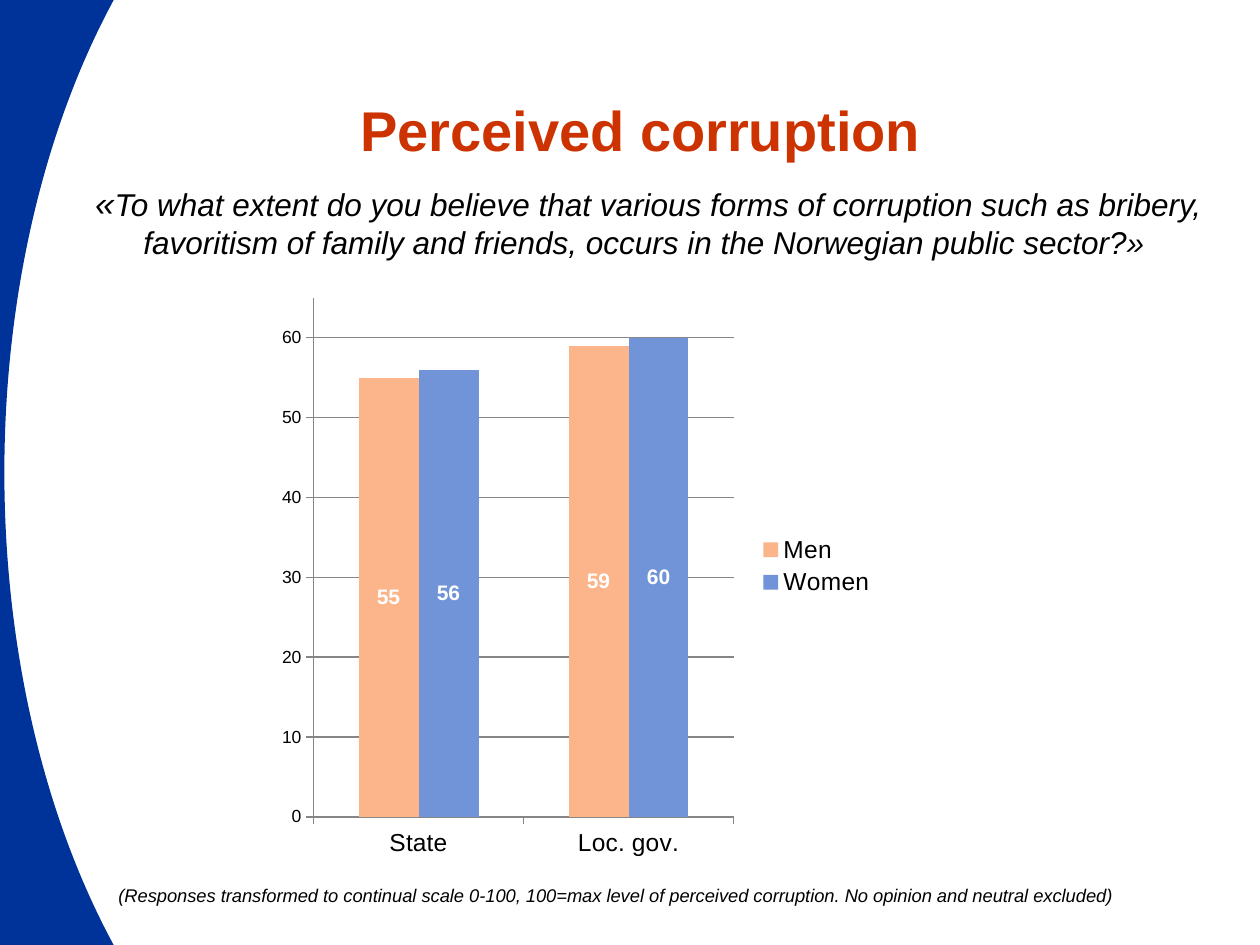
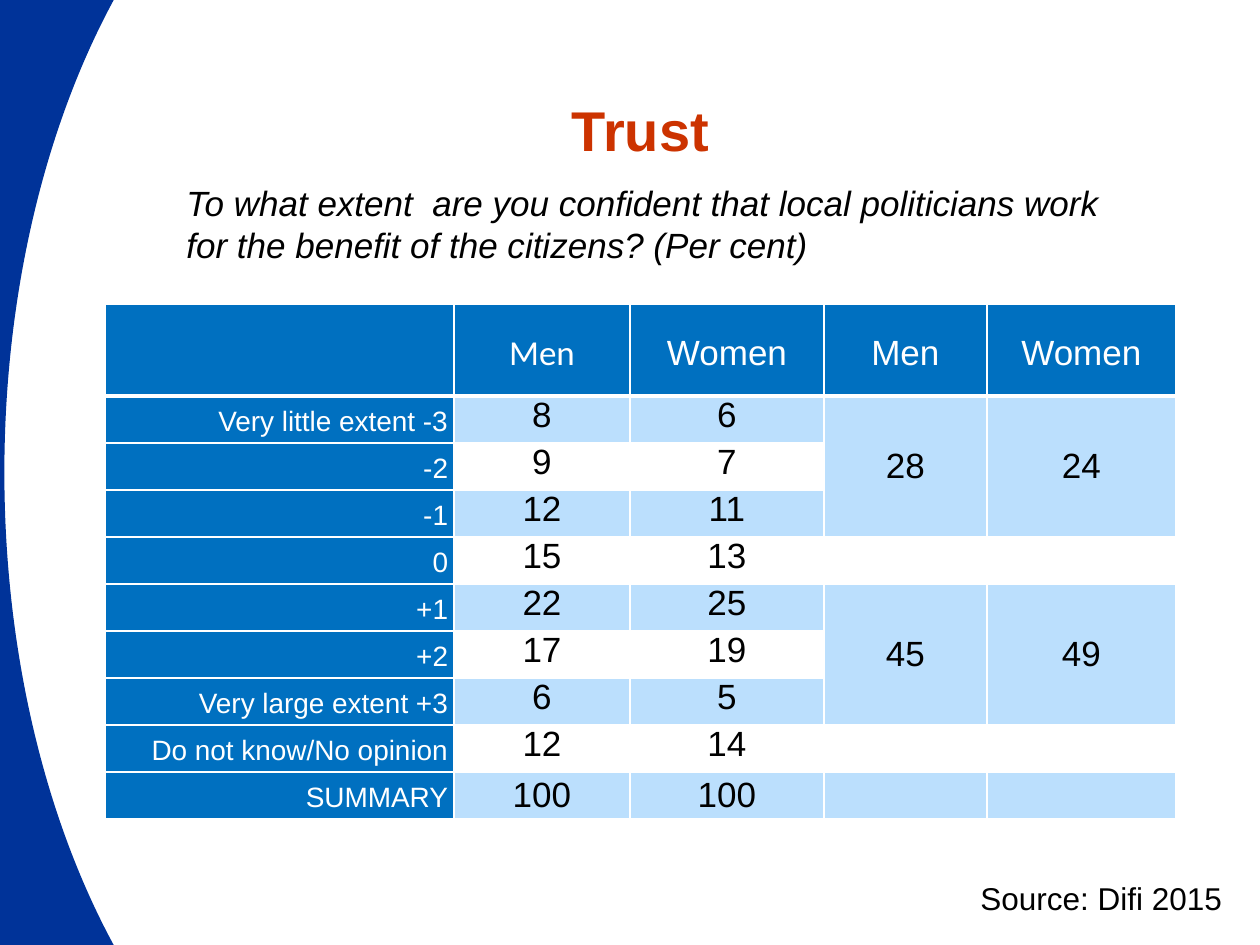
from dataclasses import dataclass

from lxml.etree import SubElement
from pptx import Presentation
from pptx.chart.data import CategoryChartData
from pptx.dml.color import RGBColor
from pptx.enum.chart import XL_CHART_TYPE as ChartType
from pptx.enum.chart import XL_LABEL_POSITION as LabelPosition
from pptx.enum.chart import XL_LEGEND_POSITION as LegendPosition
from pptx.enum.chart import XL_TICK_MARK as TickMark
from pptx.enum.shapes import MSO_SHAPE as Preset
from pptx.enum.text import MSO_ANCHOR as Anchor
from pptx.enum.text import MSO_AUTO_SIZE as AutoSize
from pptx.enum.text import PP_ALIGN as Align
from pptx.oxml import parse_xml
from pptx.oxml.ns import nsdecls, qn
from pptx.util import Emu, Pt


@dataclass(frozen=True)
class Theme:
    """Colours, fonts and type sizes of the deck."""
    band: str = "003399"
    title: str = "CC3300"
    ink: str = "000000"
    paper: str = "FFFFFF"
    head: str = "0070C0"
    stripe: str = "BBDFFD"
    men: str = "FCB58A"
    women: str = "7194D9"
    rule: str = "868686"
    face: str = "Arial"
    alt_face: str = "Calibri"
    title_size: float = 32
    large: float = 20
    body: float = 18
    row_label: float = 16
    legend: float = 14
    bar_label: float = 12
    note: float = 10.5
    axis: float = 10


THEME = Theme()
EMU_PER_PX = 914400 / 126


def px(length):
    """Turn px into EMU."""
    return Emu(round(length * EMU_PER_PX))


def rgb(colour):
    """Turn a hex string into a colour."""
    return RGBColor.from_string(colour)


def style_font(font, size, colour=THEME.ink, face=THEME.face, bold=False, italic=False):
    """Set every used property of a font."""
    font.name, font.size = face, Pt(size)
    font.bold, font.italic = bold, italic
    font.color.rgb = rgb(colour)


def add_text(page, box, spans, size, align=Align.LEFT, wrap=True, **look):
    """Place one paragraph made of spans and return its frame."""
    frame = page.shapes.add_textbox(*map(px, box)).text_frame
    frame.word_wrap = wrap
    frame.auto_size = AutoSize.SHAPE_TO_FIT_TEXT
    para = frame.paragraphs[0]
    para.alignment = align
    style_font(para.font, size, **look)
    for text in spans:
        para.add_run().text = text
    return frame


def add_page(deck, title):
    """Add a slide with the curved band and the title."""
    page = deck.slides.add_slide(deck.slide_layouts[6])
    moon = page.shapes.add_shape(Preset.MOON, *map(px, (-168, -84, 336, 1113)))
    moon.adjustments[0] = 0.513
    moon.shadow.inherit = False
    moon.fill.solid()
    moon.fill.fore_color.rgb = rgb(THEME.band)
    moon.line.fill.background()
    frame = add_text(page, (105, 73, 1071, 105), [title], THEME.title_size,
                     Align.CENTER, colour=THEME.title, bold=True)
    frame.auto_size = AutoSize.NONE
    frame.vertical_anchor = Anchor.MIDDLE
    frame.paragraphs[0].line_spacing = Pt(42)
    return page


def set_plot_area(chart, left, top, width, height):
    """Fix the inner plot area as fractions of the chart."""
    values = (("layoutTarget", "inner"), ("xMode", "edge"), ("yMode", "edge"),
              ("x", left), ("y", top), ("w", width), ("h", height))
    plot_area = chart._chartSpace.chart.plotArea
    for old in plot_area.findall(qn("c:layout")):
        plot_area.remove(old)
    layout = parse_xml(f"<c:layout {nsdecls('c')}/>")
    manual = SubElement(layout, qn("c:manualLayout"))
    for tag, value in values:
        SubElement(manual, qn(f"c:{tag}")).set("val", str(value))
    plot_area.insert(0, layout)


def add_corruption_chart(page, box):
    """Place the clustered columns for men and women."""
    data = CategoryChartData(number_format="#,##0")
    data.categories = ["State", "Loc. gov."]
    data.add_series("Men", (55, 59))
    data.add_series("Women", (56, 60))
    chart = page.shapes.add_chart(ChartType.COLUMN_CLUSTERED, *map(px, box), data).chart
    chart.has_title = False
    style_font(chart.font, THEME.axis)
    set_plot_area(chart, 0.066, 0.047, 0.683, 0.877)

    chart.has_legend = True
    chart.legend.position = LegendPosition.RIGHT
    chart.legend.include_in_layout = False
    style_font(chart.legend.font, THEME.legend)

    scale = chart.value_axis
    scale.minimum_scale, scale.maximum_scale, scale.major_unit = 0, 65, 10
    scale.tick_labels.number_format = "#,##0"
    scale.tick_labels.number_format_is_linked = False
    scale.major_gridlines.format.line.color.rgb = rgb(THEME.rule)
    for axis, size in ((scale, THEME.axis), (chart.category_axis, THEME.legend)):
        axis.major_tick_mark = TickMark.OUTSIDE
        axis.format.line.color.rgb = rgb(THEME.rule)
        style_font(axis.tick_labels.font, size)

    plot = chart.plots[0]
    plot.gap_width, plot.overlap, plot.vary_by_categories = 150, 0, False
    for series, colour in zip(plot.series, (THEME.men, THEME.women)):
        series.format.fill.solid()
        series.format.fill.fore_color.rgb = rgb(colour)
        labels = series.data_labels
        labels.show_value = True
        labels.position = LabelPosition.CENTER
        labels.number_format = "#,##0"
        labels.number_format_is_linked = False
        style_font(labels.font, THEME.bar_label, THEME.paper, bold=True)


def style_cell(cell, fill, bottom=1):
    """Give a cell white borders and a fill, or none."""
    properties = cell._tc.get_or_add_tcPr()
    for side, width in (("L", 1), ("R", 1), ("T", 1), ("B", bottom)):
        line = SubElement(properties, qn(f"a:ln{side}"), w=str(Pt(width)))
        solid = SubElement(line, qn("a:solidFill"))
        SubElement(solid, qn("a:srgbClr"), val=THEME.paper)
    if fill:
        cell.fill.solid()
        cell.fill.fore_color.rgb = rgb(fill)
    else:
        cell.fill.background()


def write_cell(cell, text, size, align, inset=1, anchor=Anchor.MIDDLE, spacing=None, **look):
    """Write one styled paragraph into a cell."""
    cell.margin_left = cell.margin_right = px(inset)
    cell.margin_top = cell.margin_bottom = 0
    cell.vertical_anchor = anchor
    para = cell.text_frame.paragraphs[0]
    para.alignment = align
    para.line_spacing = spacing
    style_font(para.font, size, **look)
    if text:
        para.add_run().text = text


def add_trust_table(page, box):
    """Place the answers with their grouped totals."""
    heads = ("", "Men", "Women", "Men", "Women")
    answers = (("Very little extent -3", "8", "6", "28", "24"),
               ("-2", "9", "7"),
               ("-1", "12", "11"),
               ("0", "15", "13"),
               ("+1", "22", "25", "45", "49"),
               ("+2", "17", "19"),
               ("Very large extent +3", "6", "5"),
               ("Do not know/No opinion", "12", "14"),
               ("SUMMARY", "100", "100"))
    last = len(answers)
    table = page.shapes.add_table(last + 1, len(heads), *map(px, box)).table
    table.first_row = table.horz_banding = False
    for column, width in zip(table.columns, (349, 176, 194, 163, 189)):
        column.width = px(width)
    for index, row in enumerate(table.rows):
        row.height = px(47 if index else 92)

    label = dict(inset=6, spacing=1.15, colour=THEME.paper)
    for col, text in enumerate(heads):
        cell = table.cell(0, col)
        style_cell(cell, THEME.head, bottom=3)
        write_cell(cell, text, THEME.large, Align.CENTER,
                   face=THEME.alt_face if col == 1 else THEME.face, **label)
    for index, answer in enumerate(answers, 1):
        stripe = THEME.stripe if index % 2 else None
        for col in range(len(heads)):
            cell = table.cell(index, col)
            text = answer[col] if col < len(answer) else ""
            if col == 0:
                style_cell(cell, THEME.head)
                write_cell(cell, text, THEME.row_label, Align.RIGHT, **label)
                continue
            grouped = col > 2 and index not in (4, 8)
            style_cell(cell, THEME.stripe if grouped else stripe)
            anchor = Anchor.MIDDLE if col > 2 or index == last else Anchor.TOP
            write_cell(cell, text, THEME.large, Align.CENTER, anchor=anchor)
    for top in (1, 5):
        for col in (3, 4):
            table.cell(top, col).merge(table.cell(top + 2, col))


def build_corruption(deck):
    """Build the slide on perceived corruption."""
    page = add_page(deck, "Perceived corruption")
    add_corruption_chart(page, (273, 270, 615, 592))
    question = ("To what extent do you believe that various forms of corruption such as "
                "bribery, favoritism of family and friends, occurs in the Norwegian "
                "public sector?» ")
    frame = add_text(page, (81, 175, 1135, 93), ["«", question], THEME.body,
                     Align.CENTER, italic=True)
    frame.paragraphs[0].runs[0].font.size = Pt(THEME.large)
    add_text(page, (106, 878, 1040, 67),
             ["(Responses transformed to continual scale 0-100, 100=max level of "
              "perceived corruption. No opinion and neutral excluded)"],
             THEME.note, wrap=False, italic=True)


def build_trust(deck):
    """Build the slide on trust in local politicians."""
    page = add_page(deck, "Trust")
    add_trust_table(page, (105, 304, 1071, 515))
    add_text(page, (174, 175, 963, 97),
             ["To what extent  are you confident that local politicians work for the "
              "benefit of the citizens? (Per cent)"], THEME.large, italic=True)
    add_text(page, (968, 873, 270, 50), ["Source: Difi 2015"], THEME.body, wrap=False)


def main():
    """Build and save the deck."""
    deck = Presentation()
    deck.slide_width, deck.slide_height = px(1260), px(945)
    build_corruption(deck)
    build_trust(deck)
    deck.save("out.pptx")


if __name__ == "__main__":
    main()
